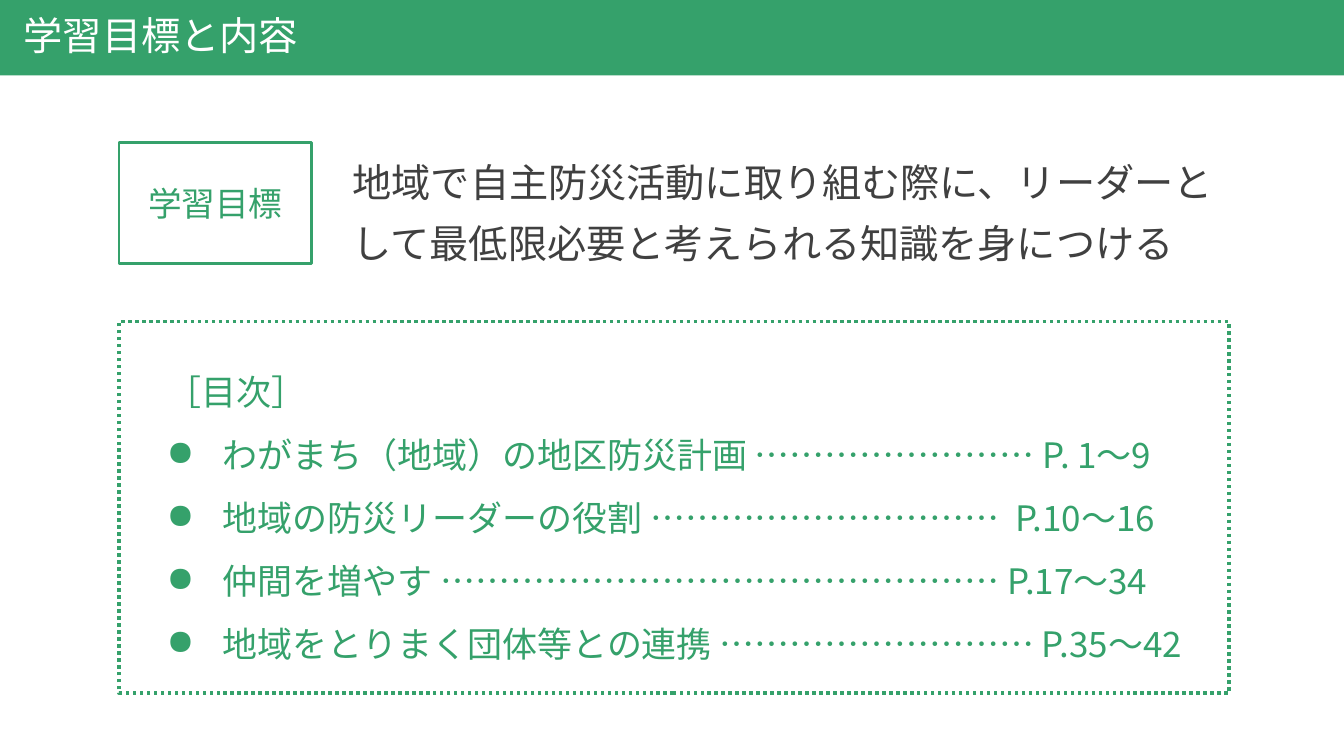
from lxml import etree
from pptx import Presentation
from pptx import util as u
from pptx.dml.color import RGBColor
from pptx.enum import dml, shapes, text
from pptx.oxml import ns

FONT = "Noto Sans CJK JP"
COLORS = {"green": "35A16B", "white": "FFFFFF", "body": "404040"}
CONTENTS = [
    "わがまち（地域）の地区防災計画 …………………… P. 1～9",
    "地域の防災リーダーの役割 …………………………  P.10～16",
    "仲間を増やす ………………………………………… P.17～34",
    "地域をとりまく団体等との連携 ……………………… P.35～42",
]


def color(name):
    return RGBColor.from_string(COLORS[name])


def add_box(slide, left, top, width, height, fill=None, line=None, weight=2, dash=None):
    shape = slide.shapes.add_shape(
        shapes.MSO_SHAPE.RECTANGLE, u.Cm(left), u.Cm(top), u.Cm(width), u.Cm(height))
    shape.shadow.inherit = False
    if fill:
        shape.fill.solid()
        shape.fill.fore_color.rgb = color(fill)
    else:
        shape.fill.background()
    if line:
        shape.line.color.rgb = color(line)
        shape.line.width = u.Pt(weight)
        if dash:
            shape.line.dash_style = dash
    else:
        shape.line.fill.background()
    return shape


def set_frame(shape, left, top, right, bottom, anchor=text.MSO_ANCHOR.MIDDLE):
    frame = shape.text_frame
    frame.word_wrap = True
    frame.vertical_anchor = anchor
    frame.margin_left, frame.margin_top = u.Cm(left), u.Cm(top)
    frame.margin_right, frame.margin_bottom = u.Cm(right), u.Cm(bottom)
    return frame


def write(paragraph, content, size=28, tone="green", align=text.PP_ALIGN.LEFT,
          spacing=1.0, before=0, after=0, indent=0, bullet=None):
    paragraph.alignment = align
    paragraph.line_spacing = spacing
    paragraph.space_before = u.Pt(before)
    paragraph.space_after = u.Pt(after)
    properties = paragraph._p.get_or_add_pPr()
    properties.set("marL", str(u.Cm(indent)))
    properties.set("indent", str(-u.Cm(indent)))
    if bullet:
        etree.SubElement(properties, ns.qn("a:buChar")).set("char", bullet)
    run = paragraph.add_run()
    run.text = content
    run.font.size = u.Pt(size)
    run.font.name = FONT
    run.font.color.rgb = color(tone)
    run_properties = run._r.get_or_add_rPr()
    run_properties.set("lang", "ja-JP")
    etree.SubElement(run_properties, ns.qn("a:ea")).set("typeface", FONT)


def add_title(slide, content):
    bar = add_box(slide, 0, 0, 33.87, 1.9, fill="green")
    frame = set_frame(bar, 0.6, 0, 0.6, 0)
    write(frame.paragraphs[0], content, tone="white", spacing=0.9)


def add_label(slide, content):
    label = add_box(slide, 3, 3.6, 4.85, 3.05, line="green")
    frame = set_frame(label, 0.1, 0, 0.1, 0)
    write(frame.paragraphs[0], content, size=24, align=text.PP_ALIGN.CENTER, before=10)


def add_goal(slide, content):
    goal = slide.shapes.add_textbox(u.Cm(8.64), u.Cm(3.5), u.Cm(22.33), u.Cm(3.15))
    frame = set_frame(goal, 0.25, 0.13, 0.25, 0.13, text.MSO_ANCHOR.TOP)
    write(frame.paragraphs[0], content, tone="body", spacing=1.3, after=36)


def add_contents(slide, heading, entries):
    box = add_box(slide, 3, 8.1, 27.97, 9.37, line="green", weight=2.5,
                  dash=dml.MSO_LINE.ROUND_DOT)
    frame = set_frame(box, 1.2, 0.13, 0.25, 0.13)
    write(frame.paragraphs[0], heading, size=25, spacing=1.5)
    for entry in entries:
        write(frame.add_paragraph(), entry, size=25, spacing=1.5, indent=1.42, bullet="●")


def main():
    presentation = Presentation()
    presentation.slide_width = u.Cm(33.87)
    presentation.slide_height = u.Cm(19.05)
    slide = presentation.slides.add_slide(presentation.slide_layouts[6])
    add_title(slide, "学習目標と内容")
    add_label(slide, "学習目標")
    add_goal(slide, "地域で自主防災活動に取り組む際に、リーダーとして最低限必要と考えられる知識を身につける")
    add_contents(slide, "［目次］", CONTENTS)
    presentation.save("out.pptx")


if __name__ == "__main__":
    main()
